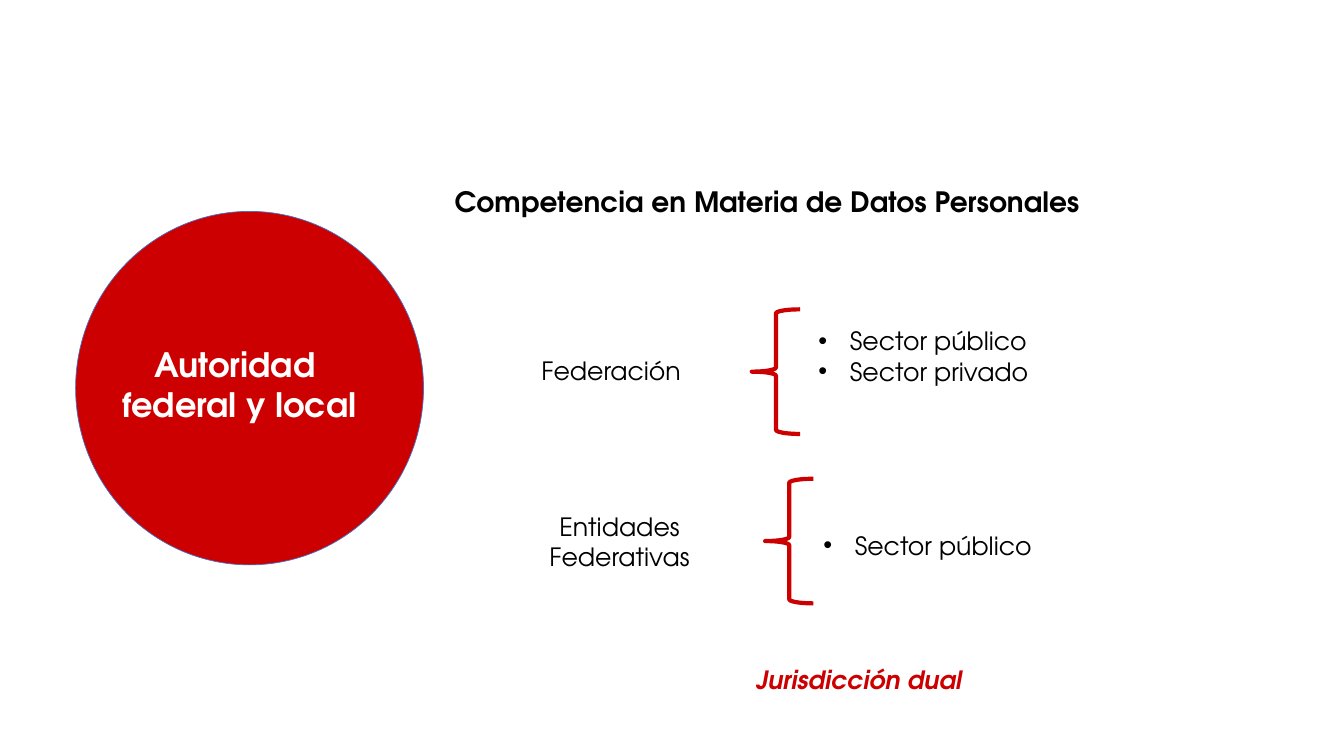
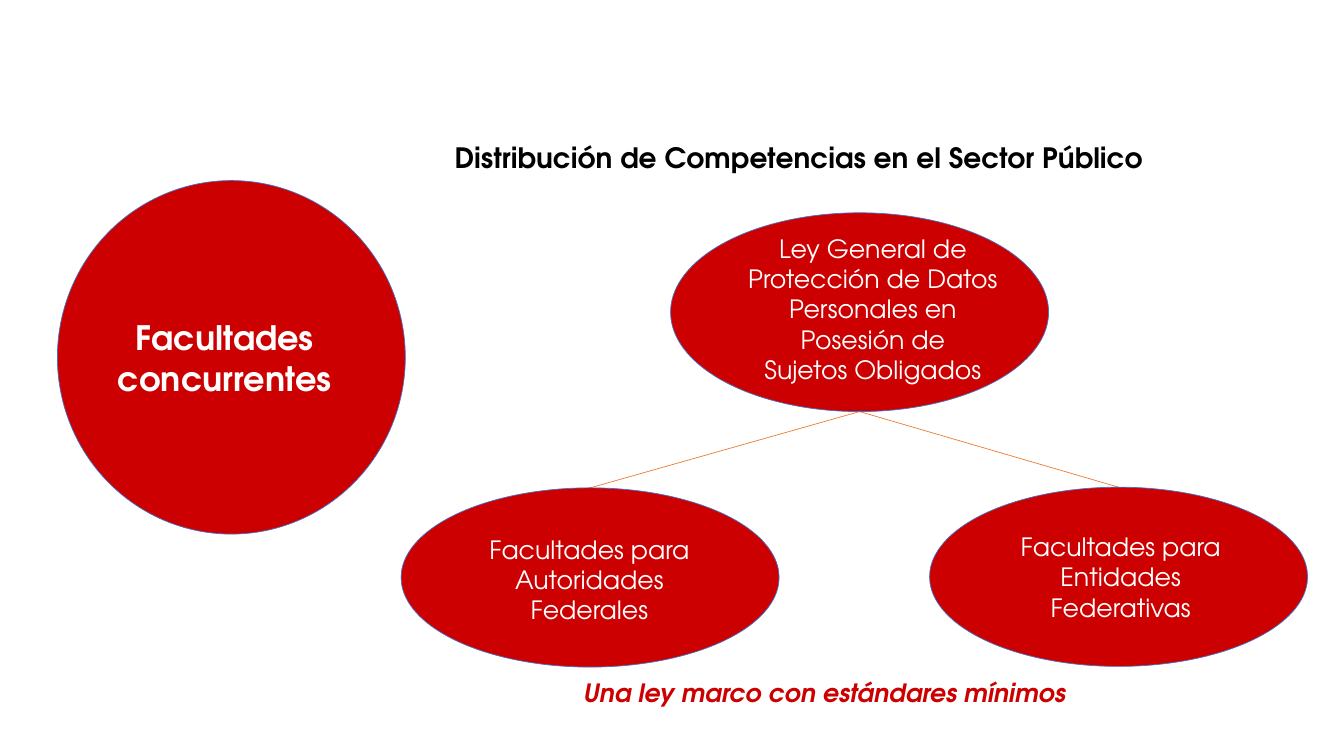
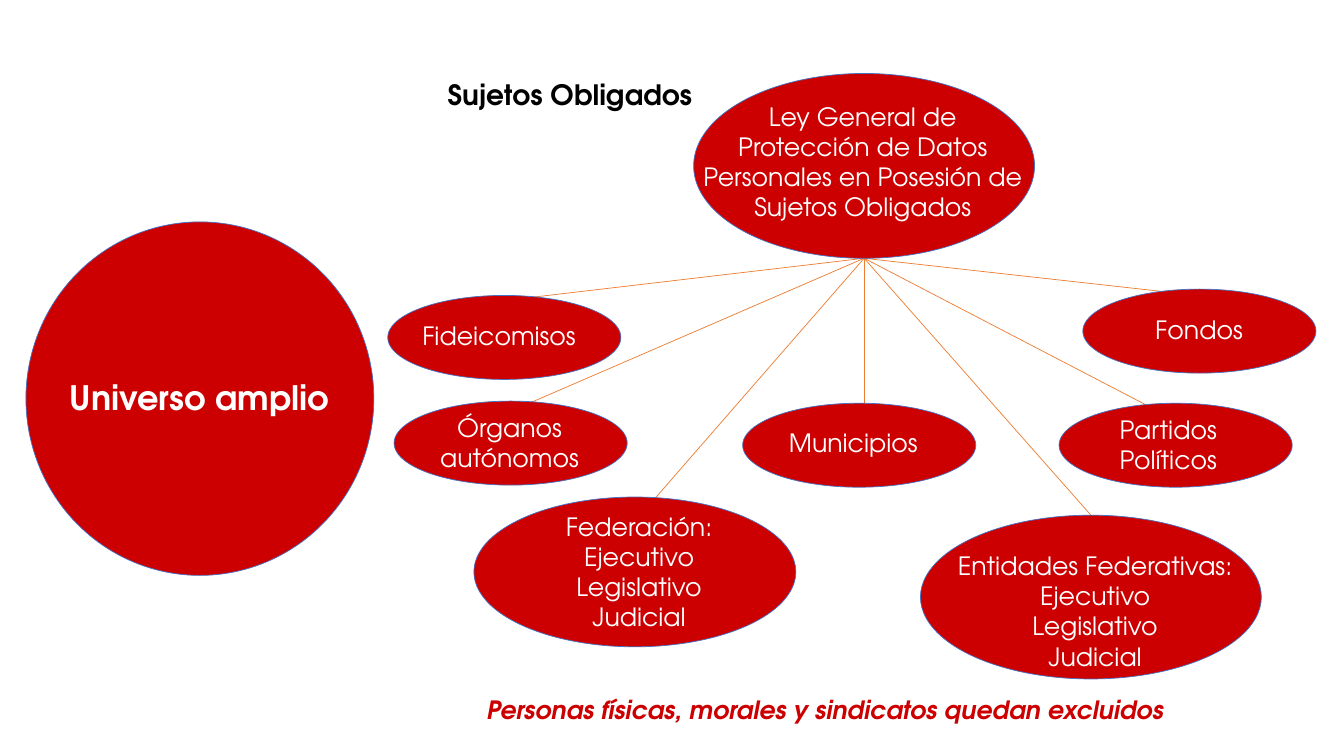
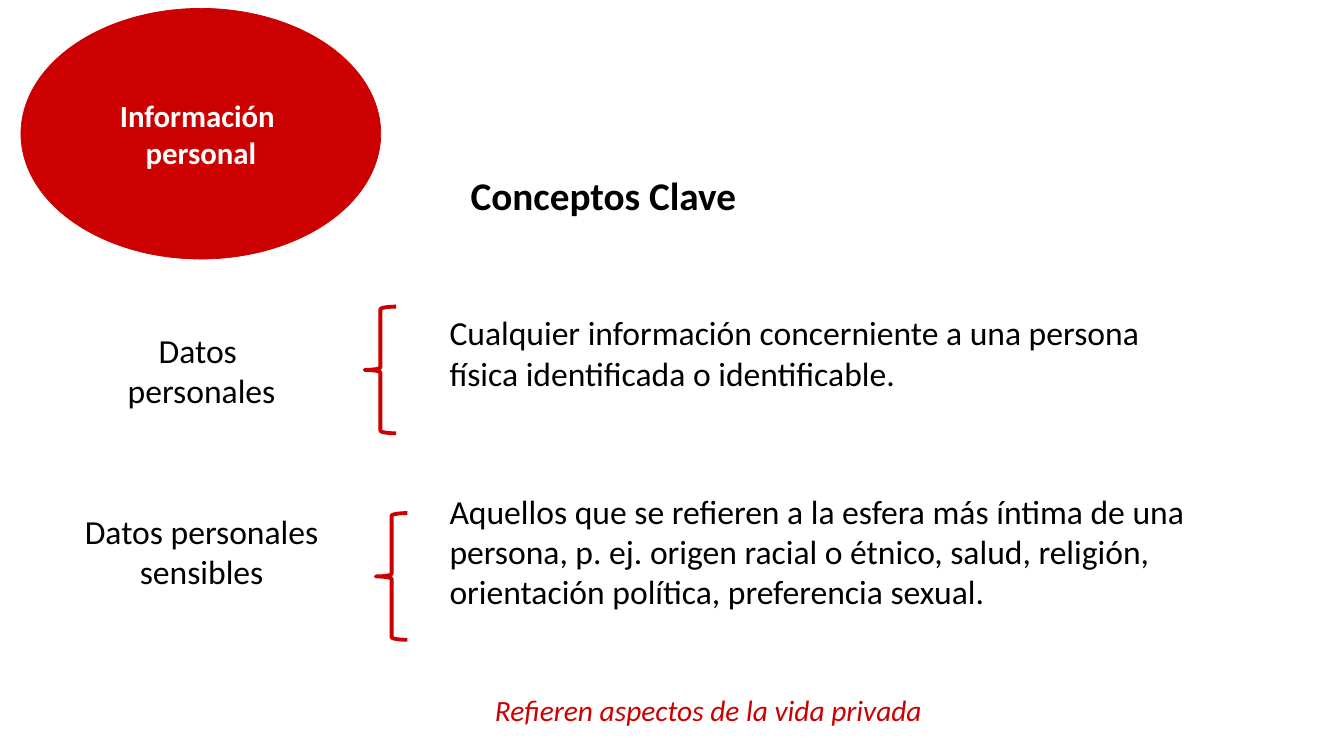
from typing import NamedTuple

from lxml import etree
from pptx import Presentation
from pptx.dml.color import RGBColor
from pptx.enum import shapes, text
from pptx.oxml import ns
from pptx.util import Pt

RED, BLUE, ORANGE, BLACK, WHITE = "CC0000", "4472C4", "ED7D31", "000000", "FFFFFF"
ADVENTOR, CALIBRI = "TeX Gyre Adventor", "Calibri"
LEFT, CENTER = text.PP_ALIGN.LEFT, text.PP_ALIGN.CENTER
TOP, MIDDLE = text.MSO_ANCHOR.TOP, text.MSO_ANCHOR.MIDDLE
HAIRLINE = 0.5
BULLET_INDENT = 22.5
CIRCLE_SIZE = (248.5, 252.5)
SMALL_OVAL = (166.5, 60)
WIDE_OVAL = (270, 128)
LAW_OVAL = (243.5, 132)


class Style(NamedTuple):
    size: float
    color: str = BLACK
    bold: bool = False
    italic: bool = False
    font: str = ADVENTOR


TITLE = Style(20, bold=True)
BODY = Style(18)
OVAL_TEXT = Style(18, WHITE)
CIRCLE_TEXT = Style(24, WHITE, bold=True)
CLOSING = Style(18, RED, bold=True, italic=True)
CONCEPT_TITLE = Style(28, bold=True, font=CALIBRI)
CONCEPT_BODY = Style(24, font=CALIBRI)
CONCEPT_CLOSING = Style(21, RED, italic=True, font=CALIBRI)
CONCEPT_OVAL_TEXT = Style(22, WHITE, bold=True, font=CALIBRI)


def rgb(code):
    return RGBColor.from_string(code)


def points(values):
    return [Pt(value) for value in values]


def add_bullet(paragraph):
    properties = paragraph._p.get_or_add_pPr()
    properties.set("marL", str(Pt(BULLET_INDENT)))
    properties.set("indent", str(-Pt(BULLET_INDENT)))
    etree.SubElement(properties, ns.qn("a:buFont"), typeface="Arial")
    etree.SubElement(properties, ns.qn("a:buChar"), char="•")


def write(frame, lines, style, align=CENTER, anchor=TOP, spacing=None, bullets=False):
    frame.vertical_anchor = anchor
    for index, line in enumerate(lines):
        paragraph = frame.add_paragraph() if index else frame.paragraphs[0]
        paragraph.alignment = align
        if spacing:
            paragraph.line_spacing = spacing
        if bullets:
            add_bullet(paragraph)
        run = paragraph.add_run()
        run.text = line
        run.font.name = style.font
        run.font.size = Pt(style.size)
        run.font.bold = style.bold
        run.font.italic = style.italic
        run.font.color.rgb = rgb(style.color)


def add_titled_slide(deck, box, wording, style=TITLE, anchor=TOP, spacing=1.0):
    slide = deck.slides.add_slide(deck.slide_layouts[5])
    title = slide.shapes.title
    title.left, title.top, title.width, title.height = points(box)
    title.text_frame.auto_size = text.MSO_AUTO_SIZE.NONE
    write(title.text_frame, [wording], style, LEFT, anchor, spacing)
    return slide


def add_label(slide, box, lines, style=BODY, align=CENTER, bullets=False):
    frame = slide.shapes.add_textbox(*points(box)).text_frame
    frame.word_wrap = True
    write(frame, lines, style, align, bullets=bullets)


def add_oval(slide, box, outline=BLUE):
    oval = slide.shapes.add_shape(shapes.MSO_SHAPE.OVAL, *points(box))
    oval.shadow.inherit = False
    oval.fill.solid()
    oval.fill.fore_color.rgb = rgb(RED)
    oval.line.color.rgb = rgb(outline)
    oval.line.width = Pt(HAIRLINE)
    return oval


def add_labelled_oval(slide, box, label_box, lines, style=OVAL_TEXT):
    oval = add_oval(slide, box)
    add_label(slide, label_box, lines, style)
    return oval


def add_topic_circle(slide, corner, label_box, lines):
    add_labelled_oval(slide, corner + CIRCLE_SIZE, label_box, lines, CIRCLE_TEXT)


def add_brace(slide, box, weight):
    brace = slide.shapes.add_shape(shapes.MSO_SHAPE.LEFT_BRACE, *points(box))
    brace.shadow.inherit = False
    brace.fill.background()
    brace.line.color.rgb = rgb(RED)
    brace.line.width = Pt(weight)


def add_spoke(slide, start, end):
    spoke = slide.shapes.add_connector(shapes.MSO_CONNECTOR.STRAIGHT, *points(start + end))
    spoke.line.color.rgb = rgb(ORANGE)
    spoke.line.width = Pt(HAIRLINE)
    etree.SubElement(spoke._element.spPr, ns.qn("a:effectLst"))
    return spoke


def add_tree(slide, law, branches):
    left, top, width, height = law[0]
    root = (left + width / 2, top + height)
    spokes = [add_spoke(slide, root, end or root) for *_, end in branches]
    for spoke, (box, label_box, lines, end) in zip(spokes, branches):
        oval = add_labelled_oval(slide, box, label_box, lines)
        if end is None:
            spoke.end_connect(oval, 0)
    add_labelled_oval(slide, *law)


def build_jurisdiction(deck):
    slide = add_titled_slide(deck, (317.5, 128, 592, 32),
                             "Competencia en Materia de Datos Personales")
    add_topic_circle(slide, (54, 151), (71, 242, 200, 65.5),
                     ["Autoridad ", "federal y local"])
    add_label(slide, (347, 250.5, 179, 29), ["Federación"])
    add_label(slide, (353, 361.5, 179, 51), ["Entidades Federativas"])
    for left, top in ((537, 221), (546.5, 342)):
        add_brace(slide, (left, top, 34.5, 89), 3)
    add_label(slide, (577.5, 229, 179, 73), ["Sector público", "Sector privado"],
              align=LEFT, bullets=True)
    add_label(slide, (581, 375, 179, 29), ["Sector público"], align=LEFT, bullets=True)
    add_label(slide, (317.5, 471, 592, 29), ["Jurisdicción dual"], CLOSING)


def build_distribution(deck):
    slide = add_titled_slide(deck, (317.5, 97, 592, 32),
                             "Distribución de Competencias en el Sector Público")
    add_topic_circle(slide, (41, 129), (60.5, 223, 200, 65.5),
                     ["Facultades concurrentes"])
    law = ((479, 152, 270, 142), (523.5, 163, 200, 117),
           ["Ley General de Protección de Datos Personales en Posesión de",
            "Sujetos Obligados"])
    add_tree(slide, law, [
        ((286.5, 348.5) + WIDE_OVAL, (321, 378, 200, 73),
         ["Facultades para Autoridades Federales"], None),
        ((664, 348) + WIDE_OVAL, (700.5, 376, 200, 73),
         ["Facultades para Entidades Federativas"], None),
    ])
    add_label(slide, (317.5, 480, 543, 29),
              ["Una ley marco con estándares mínimos"], CLOSING)


def build_obligated_subjects(deck):
    slide = add_titled_slide(deck, (312.5, 52, 592, 32), "Sujetos Obligados")
    add_topic_circle(slide, (18.5, 158.5), (37.5, 265.5, 210, 36), ["Universo amplio"])
    law = ((495.5, 52.5) + LAW_OVAL, (492, 68.5, 248.5, 94),
           ["Ley General de",
            "Protección de Datos Personales en Posesión de Sujetos Obligados"])
    powers = ["Ejecutivo", "Legislativo", "Judicial"]
    add_tree(slide, law, [
        ((277, 211) + SMALL_OVAL, (288.5, 225.5, 136, 29), ["Fideicomisos"], (366, 214)),
        ((281.5, 286.5) + SMALL_OVAL, (303, 291, 122, 51), ["Órganos autónomos"],
         (373.5, 290)),
        ((338.5, 355, 230, 107), (351.5, 361.5, 210, 94), ["Federación:"] + powers,
         (463.5, 361)),
        ((530.5, 288) + SMALL_OVAL, (548.5, 301.5, 122, 29), ["Municipios"],
         (617.25, 291.5)),
        ((657.5, 368, 243.5, 117), (656.5, 389.5, 251.5, 94),
         ["Entidades Federativas:"] + powers, None),
        ((756.5, 288) + SMALL_OVAL, (773.5, 292.5, 122, 51), ["Partidos Políticos"],
         (823, 291.5)),
        ((773.5, 206.5) + SMALL_OVAL, (795.5, 221, 122, 29), ["Fondos"], (837.5, 209)),
    ])
    add_label(slide, (293.5, 492.5, 592, 29),
              ["Personas físicas, morales y sindicatos quedan excluidos"], CLOSING)


def build_key_concepts(deck):
    slide = add_titled_slide(deck, (329, 116.5, 268.5, 49), "Conceptos Clave",
                             CONCEPT_TITLE, MIDDLE, 0.9)
    topic = add_oval(slide, (15, 6, 257, 179), RED)
    topic.text_frame.word_wrap = False
    write(topic.text_frame, ["Información ", "personal"], CONCEPT_OVAL_TEXT, anchor=MIDDLE)
    for left, top in ((260.5, 219), (268.5, 366.5)):
        add_brace(slide, (left, top, 22.5, 90.5), 2.75)
    add_label(slide, (42.5, 232, 203, 65.5), ["Datos ", "personales"], CONCEPT_BODY)
    add_label(slide, (42.5, 361.5, 203, 65.5), ["Datos personales sensibles"], CONCEPT_BODY)
    add_label(slide, (314, 219.5, 544, 65.5),
              ["Cualquier información concerniente a una persona física identificada "
               "o identificable."], CONCEPT_BODY, LEFT)
    add_label(slide, (314, 347, 605, 94),
              ["Aquellos que se refieren a la esfera más íntima de una persona, p. ej. "
               "origen racial o étnico, salud, religión, orientación política, "
               "preferencia sexual."], CONCEPT_BODY, LEFT)
    add_label(slide, (245.5, 491, 521, 32), ["Refieren aspectos de la vida privada"],
              CONCEPT_CLOSING)


def main():
    deck = Presentation()
    deck.slide_width, deck.slide_height = Pt(960), Pt(540)
    build_jurisdiction(deck)
    build_distribution(deck)
    build_obligated_subjects(deck)
    build_key_concepts(deck)
    deck.save("out.pptx")


if __name__ == "__main__":
    main()
